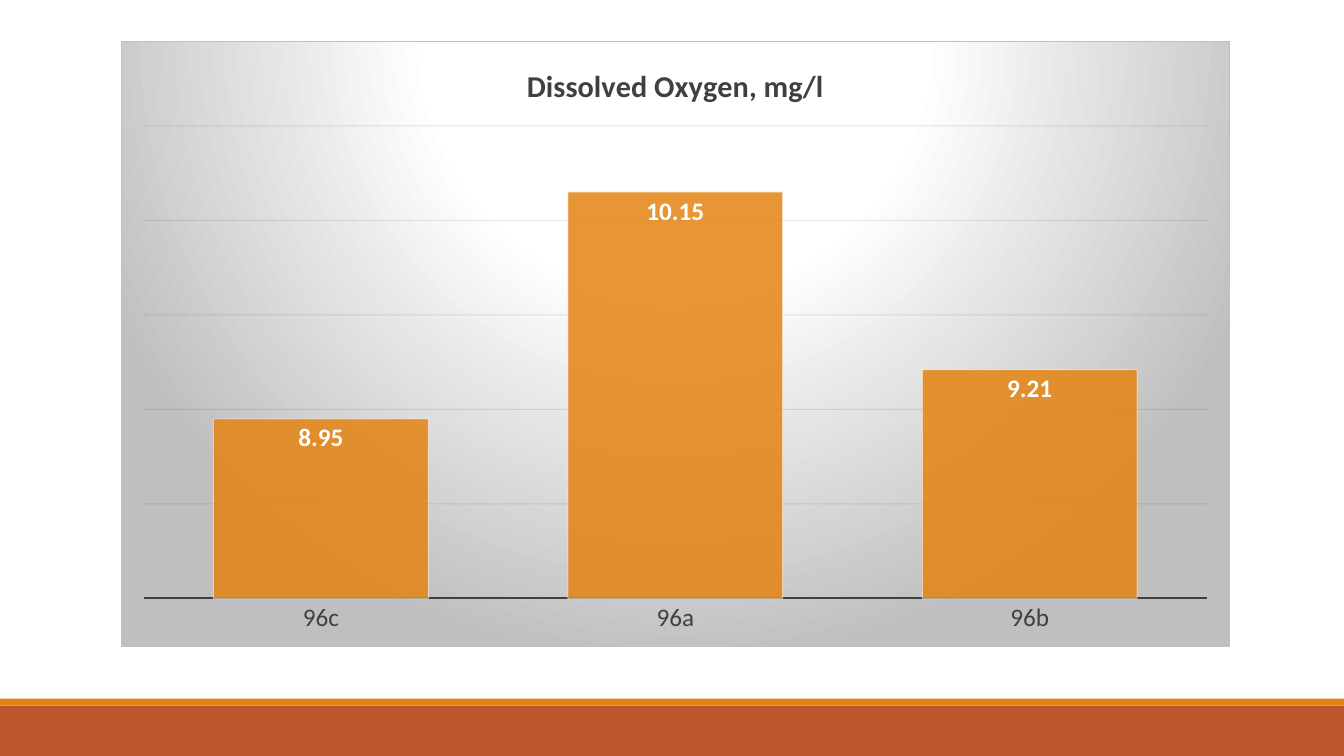
from dataclasses import dataclass

from lxml import etree
from pptx import Presentation
from pptx import util as u
from pptx.chart.data import CategoryChartData
from pptx.dml.color import RGBColor
from pptx.enum import chart as ch, shapes
from pptx.oxml import parse_xml
from pptx.oxml.ns import nsdecls, qn

COLOURS = {
    "rust": "BD582C",
    "orange": "E48312",
    "text": "404040",
    "grid": "0D0D0D",
    "grey": "BFBFBF",
    "white": "FFFFFF",
    "black": "000000",
}
FONT = "Calibri"
HEADING = "Dissolved Oxygen, mg/l"
OXYGEN = {"96c": 8.95, "96a": 10.15, "96b": 9.21}
NUMBER_FORMAT = "#,##0.00"
SLIDE_WIDTH, SLIDE_HEIGHT = 960, 540


@dataclass
class Band:
    top: float
    height: float
    colour: str


FOOTER_BANDS = [Band(504, 36, "rust"), Band(499, 5, "orange")]


def rgb(name: str) -> RGBColor:
    return RGBColor.from_string(COLOURS[name])


def draw_band(slide, band: Band) -> None:
    strip = slide.shapes.add_shape(
        shapes.MSO_SHAPE.RECTANGLE, 0, u.Pt(band.top), u.Pt(SLIDE_WIDTH), u.Pt(band.height)
    )
    strip.shadow.inherit = False
    strip.fill.solid()
    strip.fill.fore_color.rgb = rgb(band.colour)
    strip.line.fill.background()


def set_font(font, size: float, colour: str, bold: bool = False) -> None:
    font.name, font.size, font.bold = FONT, u.Pt(size), bold
    font.color.rgb = rgb(colour)


def set_line(line, colour: str, width: float) -> None:
    line.color.rgb = rgb(colour)
    line.width = u.Pt(width)


def set_opacity(element, colour_query: str, percent: int) -> None:
    for colour in element.xpath(colour_query):
        etree.SubElement(colour, qn("a:alpha")).set("val", str(percent * 1000))


def fill_chart_area(chart) -> None:
    """Give the chart area its circular gradient and thin border."""
    stops = [(0, "white"), (39, "white"), (100, "grey")]
    stop_xml = "".join(
        f'<a:gs pos="{pos * 1000}"><a:srgbClr val="{COLOURS[name]}"/></a:gs>'
        for pos, name in stops
    )
    area = parse_xml(
        f'<c:spPr {nsdecls("c", "a")}><a:gradFill><a:gsLst>{stop_xml}</a:gsLst>'
        '<a:path path="circle">'
        '<a:fillToRect l="50000" t="-80000" r="50000" b="180000"/></a:path></a:gradFill>'
        f'<a:ln w="{u.Pt(0.75)}"><a:solidFill><a:srgbClr val="{COLOURS["grey"]}"/>'
        "</a:solidFill></a:ln></c:spPr>"
    )
    chart.element.find(qn("c:chart")).addnext(area)


def place_plot(chart, left: float, top: float, width: float, height: float) -> None:
    """Fix the inner plot area, in fractions of the chart."""
    plot_area = chart.element.find(qn("c:chart")).find(qn("c:plotArea"))
    for layout in plot_area.findall(qn("c:layout")):
        plot_area.remove(layout)
    sizes = "".join(
        f'<c:{tag} val="{value}"/>'
        for tag, value in zip("xywh", (left, top, width, height))
    )
    plot_area.insert(0, parse_xml(
        f'<c:layout {nsdecls("c")}><c:manualLayout><c:layoutTarget val="inner"/>'
        f'<c:xMode val="edge"/><c:yMode val="edge"/>{sizes}</c:manualLayout></c:layout>'
    ))


def format_axes(chart) -> None:
    samples, oxygen = chart.category_axis, chart.value_axis
    samples.major_tick_mark = ch.XL_TICK_MARK.NONE
    set_font(samples.tick_labels.font, 18, "text")
    set_line(samples.format.line, "text", 1.5)

    oxygen.visible = False
    oxygen.minimum_scale, oxygen.maximum_scale, oxygen.major_unit = 8, 10.5, 0.5
    oxygen.tick_labels.number_format = NUMBER_FORMAT
    oxygen.tick_labels.number_format_is_linked = False
    set_line(oxygen.major_gridlines.format.line, "grid", 0.75)
    set_opacity(chart.element, ".//c:majorGridlines//a:srgbClr", 10)


def format_bars(plot) -> None:
    plot.gap_width = 65
    plot.vary_by_categories = False
    bars = plot.series[0]
    bars.format.fill.solid()
    bars.format.fill.fore_color.rgb = rgb("orange")
    set_line(bars.format.line, "white", 0.75)
    set_opacity(bars._element, "./c:spPr/a:solidFill/a:srgbClr", 85)
    set_opacity(bars._element, "./c:spPr/a:ln//a:srgbClr", 50)

    labels = bars.data_labels
    labels.show_value = True
    labels.position = ch.XL_LABEL_POSITION.INSIDE_END
    labels.number_format = NUMBER_FORMAT
    labels.number_format_is_linked = False
    set_font(labels.font, 18, "white", bold=True)


def draw_oxygen_chart(slide) -> None:
    readings = CategoryChartData(number_format=NUMBER_FORMAT)
    readings.categories = list(OXYGEN)
    readings.add_series(HEADING, list(OXYGEN.values()))
    chart = slide.shapes.add_chart(
        ch.XL_CHART_TYPE.COLUMN_CLUSTERED,
        u.Pt(86.4), u.Pt(29), u.Pt(792), u.Pt(433.5), readings,
    ).chart
    set_font(chart.font, 18, "black")
    chart.has_legend = False
    chart.has_title = True
    heading = chart.chart_title.text_frame
    heading.text = HEADING
    set_font(heading.paragraphs[0].font, 21.6, "text", bold=True)
    chart.chart_title.include_in_layout = False
    format_axes(chart)
    format_bars(chart.plots[0])
    place_plot(chart, 0.02, 0.14, 0.96, 0.78)
    fill_chart_area(chart)


def main() -> None:
    deck = Presentation()
    deck.slide_width, deck.slide_height = u.Pt(SLIDE_WIDTH), u.Pt(SLIDE_HEIGHT)
    slide = deck.slides.add_slide(deck.slide_layouts[6])
    for band in FOOTER_BANDS:
        draw_band(slide, band)
    draw_oxygen_chart(slide)
    deck.save("out.pptx")


if __name__ == "__main__":
    main()
